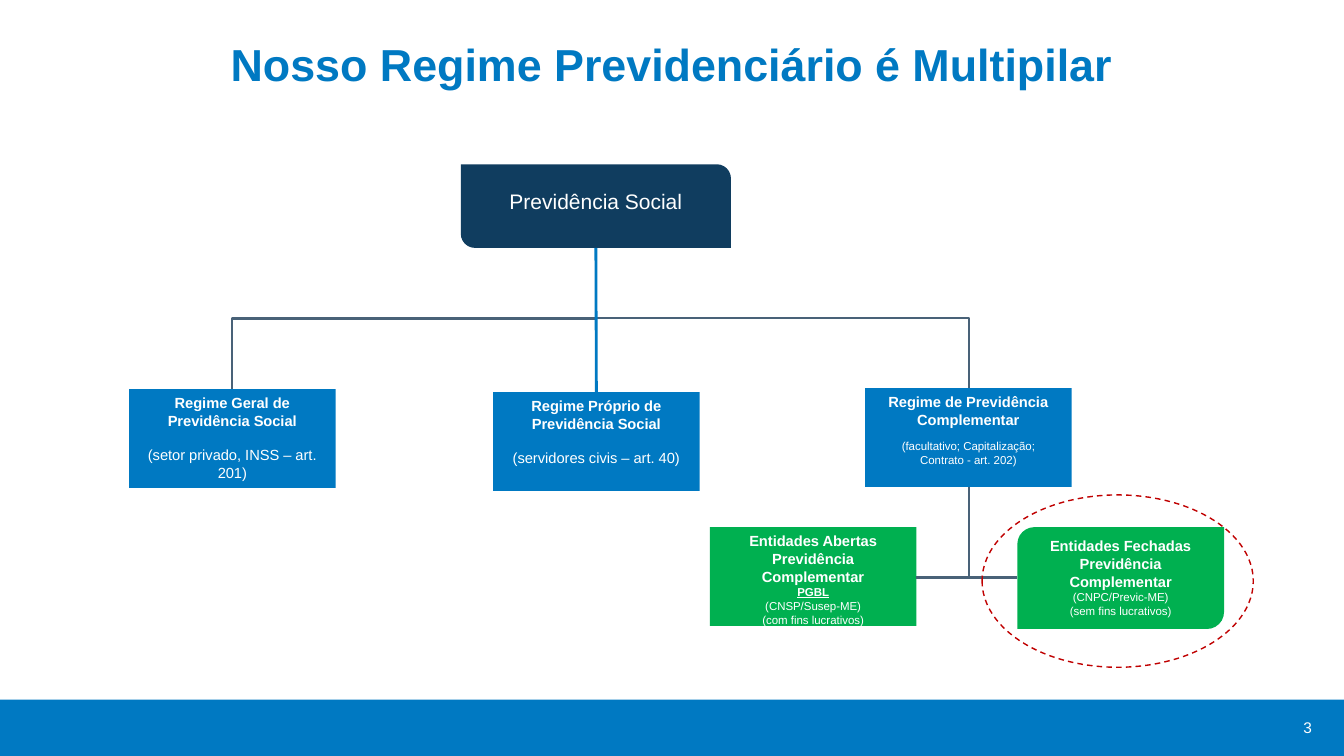
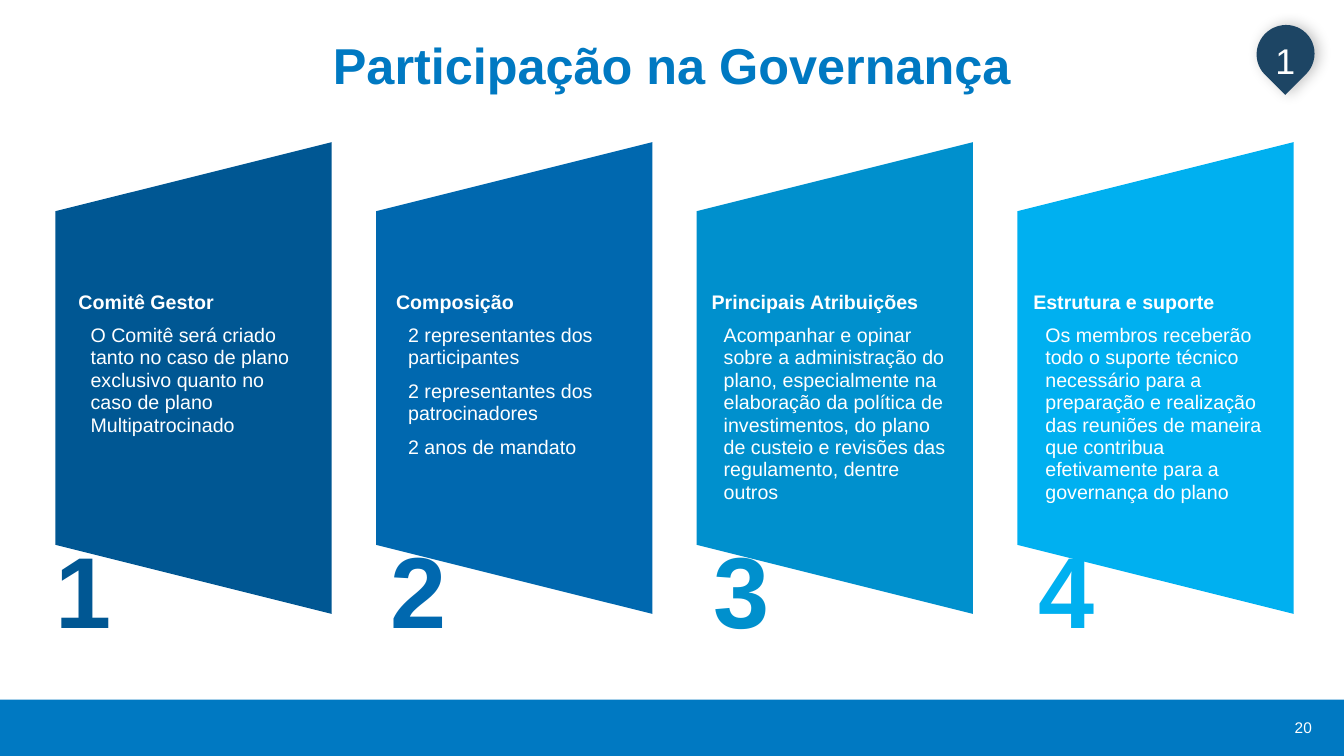
from lxml import etree
from pptx import Presentation
from pptx import util as u
from pptx.dml import color
from pptx.enum import dml, shapes, text
from pptx.oxml import ns

COLORS = {
    "white": "FFFFFF", "blue": "0079C2", "navy": "103D5F", "green": "00B050",
    "slate": "496278", "red": "C00000", "pin": "1D4564", "black": "000000",
}
FONT = "Arial"
SLIDE_W, SLIDE_H, BAND_TOP = 13.33, 7.5, 6.94
RECT = shapes.MSO_SHAPE.RECTANGLE
DIAGONAL = shapes.MSO_SHAPE.ROUND_2_DIAG_RECTANGLE
CENTER, LEFT, RIGHT = text.PP_ALIGN.CENTER, text.PP_ALIGN.LEFT, text.PP_ALIGN.RIGHT
TOP, MIDDLE, BOTTOM = text.MSO_ANCHOR.TOP, text.MSO_ANCHOR.MIDDLE, text.MSO_ANCHOR.BOTTOM

HEAD = {"size": 10.5, "bold": True}
BODY = {"size": 10.5}
SMALL = {"size": 8.2}
NODES = {
    "geral": (RECT, "blue", (1.28, 3.86, 2.05, 0.98), [
        ("Regime Geral de", HEAD),
        ("Previdência Social", HEAD),
        ("(setor privado, INSS – art. 201)", {**BODY, "before": 12})]),
    "proprio": (RECT, "blue", (4.89, 3.89, 2.05, 0.98), [
        ("Regime Próprio de", HEAD),
        ("Previdência Social", HEAD),
        ("(servidores civis – art. 40)", {**BODY, "before": 12})]),
    "complementar": (RECT, "blue", (8.58, 3.85, 2.05, 0.98), [
        ("Regime de Previdência", HEAD),
        ("Complementar", HEAD),
        ("(facultativo; Capitalização;", {**SMALL, "before": 8}),
        ("Contrato - art. 202)", SMALL)]),
    "abertas": (RECT, "green", (7.04, 5.23, 2.05, 0.98), [
        ("Entidades Abertas", HEAD),
        ("Previdência Complementar", HEAD),
        ("PGBL", {"size": 8.2, "bold": True, "underline": True}),
        ("(CNSP/Susep-ME)", SMALL),
        ("(com fins lucrativos)", SMALL)]),
    "fechadas": (DIAGONAL, "green", (10.09, 5.23, 2.05, 1.01), [
        ("Entidades Fechadas", HEAD),
        ("Previdência Complementar", HEAD),
        ("(CNPC/Previc-ME)", SMALL),
        ("(sem fins lucrativos)", SMALL)]),
}
PANELS = [
    ("005793", 0.68, 2.41, 0.45, "Comitê Gestor", [
        "O Comitê será criado tanto no caso de plano exclusivo quanto no caso de "
        "plano Multipatrocinado"]),
    ("0068AF", 3.83, 2.54, 3.77, "Composição", [
        "2 representantes dos participantes",
        "2 representantes dos patrocinadores",
        "2 anos de mandato"]),
    ("0090CD", 6.96, 2.54, 6.98, "Principais Atribuições", [
        "Acompanhar e opinar sobre a administração do plano, especialmente na "
        "elaboração da política de investimentos, do plano de custeio e revisões "
        "das regulamento, dentre outros"]),
    ("00B0F0", 10.15, 2.54, 10.2, "Estrutura e suporte", [
        "Os membros receberão todo o suporte técnico necessário para a preparação "
        "e realização das reuniões de maneira que contribua efetivamente para a "
        "governança do plano"]),
]


def rgb(name):
    return color.RGBColor.from_string(COLORS.get(name, name))


def inches(values):
    return [u.Inches(value) for value in values]


def write(shape, lines, ink="white", align=CENTER, anchor=TOP, wrap=True):
    frame = shape.text_frame
    frame.word_wrap = wrap
    frame.vertical_anchor = anchor
    frame.text = "\n".join(line for line, style in lines)
    for para, (line, style) in zip(frame.paragraphs, lines):
        para.alignment = align
        para.line_spacing = style.get("spacing")
        para.space_before = u.Pt(style.get("before", 0))
        para.space_after = u.Pt(style.get("after", 0))
        if "indent" in style:
            para._p.get_or_add_pPr().set("marL", str(u.Inches(style["indent"])))
        for span in para.runs:
            span.font.name = FONT
            span.font.size = u.Pt(style["size"])
            span.font.bold = style.get("bold", False)
            span.font.underline = style.get("underline", False)
            span.font.color.rgb = rgb(ink)
    return frame


def add_text(page, area, lines, **options):
    return write(page.shapes.add_textbox(*inches(area)), lines, **options)


def add_block(page, kind, area, fill):
    block = page.shapes.add_shape(kind, *inches(area))
    block.shadow.inherit = False
    block.fill.solid()
    block.fill.fore_color.rgb = rgb(fill)
    block.line.fill.background()
    return block


def add_page(deck, title, size, area, anchor, number):
    page = deck.slides.add_slide(deck.slide_layouts[6])
    add_block(page, RECT, (0, BAND_TOP, SLIDE_W, SLIDE_H - BAND_TOP), "blue")
    add_text(page, (11.67, 7.04, 1.44, 0.36), [(number, {"size": 11})],
             align=RIGHT, anchor=MIDDLE)
    add_text(page, area, [(title, {"size": size, "bold": True, "spacing": 0.9})],
             ink="blue", anchor=anchor)
    return page


def add_line(page, kind, area, ink, width):
    line = page.shapes.add_connector(kind, *inches(area))
    line.line.color.rgb = rgb(ink)
    line.line.width = u.Pt(width)
    etree.SubElement(line._element.spPr, ns.qn("a:effectLst"))
    return line


def add_elbow(page, start, end, preset, source=None, target=None, side=0):
    (x1, y1), (x2, y2) = start, end
    line = add_line(page, shapes.MSO_CONNECTOR.ELBOW, (x1, y1, x2, y2), "slate", 1.5)
    if source is not None:
        line.begin_connect(source, 2)
    if target is not None:
        line.end_connect(target, side)
    width, height = y2 - y1, abs(x2 - x1)
    line.left, line.top, line.width, line.height = inches(
        ((x1 + x2 - width) / 2, (y1 + y2 - height) / 2, width, height))
    to_right = x2 > x1
    frame = line._element.spPr.find(ns.qn("a:xfrm"))
    frame.set("rot", str((270 if to_right else 90) * 60000))
    frame.set("flipH", "1" if to_right else "0")
    line._element.spPr.find(ns.qn("a:prstGeom")).set("prst", preset)


def build_regimes(deck):
    page = add_page(deck, "Nosso Regime Previdenciário é Multipilar", 32,
                    (0, 0.11, SLIDE_W, 1.11), MIDDLE, "3")
    header = add_block(page, DIAGONAL, (4.57, 1.63, 2.68, 0.83), "navy")
    header.adjustments[0], header.adjustments[1] = 0, 0.17
    frame = write(header, [("Previdência Social", {"size": 15})], anchor=MIDDLE)
    frame.margin_bottom = u.Inches(0.15)

    nodes = {}
    for name, (kind, fill, area, lines) in NODES.items():
        nodes[name] = add_block(page, kind, area, fill)
        frame = write(nodes[name], lines)
        frame.margin_left = frame.margin_right = u.Inches(0.12)

    root, fork = (5.91, 2.46), (9.61, 4.83)
    add_elbow(page, root, (2.3, 3.86), "bentConnector3", target=nodes["geral"])
    add_elbow(page, root, (9.61, 3.85), "bentConnector3", target=nodes["complementar"])
    add_elbow(page, fork, (9.09, 5.73), "bentConnector2",
              nodes["complementar"], nodes["abertas"], 3)
    add_elbow(page, fork, (10.09, 5.73), "bentConnector2", nodes["complementar"])
    trunk = add_line(page, shapes.MSO_CONNECTOR.STRAIGHT, (*root, 5.91, 3.89), "blue", 2)
    trunk.end_connect(nodes["proprio"], 0)

    highlight = add_block(page, shapes.MSO_SHAPE.OVAL, (9.74, 4.91, 2.69, 1.71), "white")
    highlight.fill.background()
    highlight.line.color.rgb = rgb("red")
    highlight.line.width = u.Pt(1)
    highlight.line.dash_style = dml.MSO_LINE.DASH


def add_pin(page, label):
    pin = add_block(page, shapes.MSO_SHAPE.TEAR, (12.46, 0.25, 0.58, 0.57), "pin")
    pin.rotation = 135
    effects = pin._element.spPr.find(ns.qn("a:effectLst"))
    shadow = etree.SubElement(effects, ns.qn("a:outerShdw"), blurRad=str(u.Pt(10)),
                              dist=str(u.Pt(3)), dir="0", rotWithShape="0")
    tint = etree.SubElement(shadow, ns.qn("a:srgbClr"), val=COLORS["black"])
    etree.SubElement(tint, ns.qn("a:alpha"), val="23000")
    frame = add_text(page, (12.55, 0.1, 0.39, 0.59), [(label, {"size": 44})],
                     align=LEFT, anchor=MIDDLE, wrap=False)
    frame.paragraphs[0].runs[0].font._element.set("baseline", "-25000")


def build_governance(deck):
    page = add_page(deck, "Participação na Governança", 36,
                    (0, 0.19, SLIDE_W, 0.81), BOTTOM, "20")
    length, breadth, first_center, pitch = 4.68, 2.74, 1.92, 3.18
    heading = {"size": 14, "bold": True, "spacing": 0.95, "after": 8}
    detail = {"size": 14, "spacing": 0.95, "after": 8, "indent": 0.12}
    for index, (fill, *_) in enumerate(PANELS):
        left = first_center + index * pitch - length / 2
        panel = add_block(page, shapes.MSO_SHAPE.TRAPEZOID,
                          (left, 2.38, length, breadth), fill)
        panel.rotation = 270
    for index, (fill, left, width, number_left, title, details) in enumerate(PANELS, 1):
        add_text(page, (left, 2.84, width, 2.4),
                 [(title, heading)] + [(line, detail) for line in details], align=LEFT)
        add_text(page, (number_left, 5.19, 0.76, 1.31),
                 [(str(index), {"size": 72, "bold": True})], ink=fill, wrap=False)
    add_pin(page, "1")


def main():
    deck = Presentation()
    deck.slide_width, deck.slide_height = inches((SLIDE_W, SLIDE_H))
    build_regimes(deck)
    build_governance(deck)
    deck.save("out.pptx")


if __name__ == "__main__":
    main()
